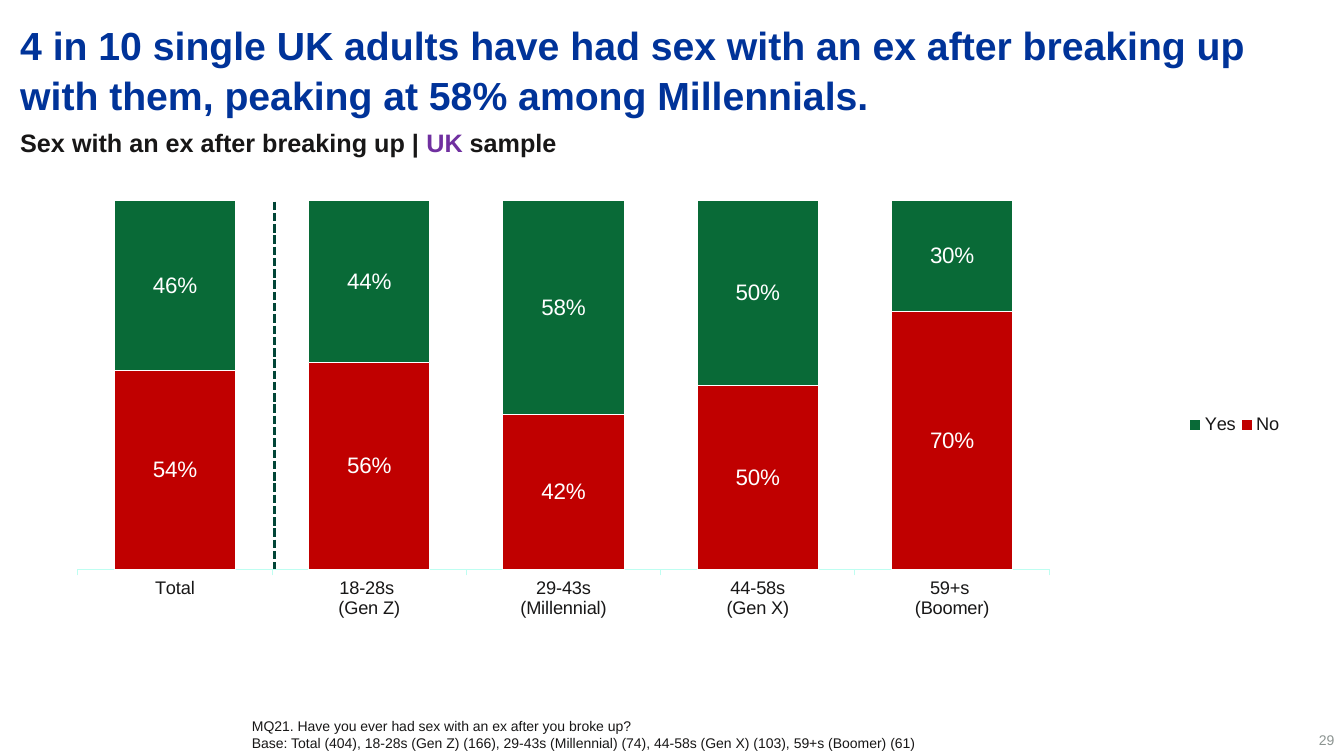
from dataclasses import dataclass

from lxml import etree
from pptx import Presentation
from pptx import util as u
from pptx.chart.data import CategoryChartData
from pptx.dml.color import RGBColor
from pptx.enum import chart as ch, dml, shapes, text
from pptx.oxml import parse_xml
from pptx.oxml.ns import nsdecls, qn

INK, GREEN, RED, WHITE = "181717", "096A37", "C00000", "FFFFFF"
NAVY, PURPLE, GREY, DARK_GREEN, MINT = "003399", "7030A0", "8C9491", "014537", "BEFEF1"


@dataclass
class Run:
    words: str
    color: str = INK


@dataclass
class TextBlock:
    box: tuple[float, float, float, float]
    paragraphs: list[list[Run]]
    size: float
    bold: bool = False
    align: text.PP_ALIGN = text.PP_ALIGN.LEFT
    anchor: text.MSO_ANCHOR = text.MSO_ANCHOR.TOP
    inset: tuple[float, float] = (0, 0)
    spacing: float = 1.0


@dataclass
class Answer:
    name: str
    shares: list[float]
    color: str


def rgb(value: str) -> RGBColor:
    return RGBColor.from_string(value)


def apply(target, values: dict) -> None:
    for name, value in values.items():
        setattr(target, name, value)


def set_font(font, size: float, color: str, bold: bool = False) -> None:
    apply(font, {"name": "Arial", "size": u.Pt(size), "bold": bold})
    font.color.rgb = rgb(color)


def set_line(line, color: str, width: float) -> None:
    line.color.rgb = rgb(color)
    line.width = u.Pt(width)


def write(shape, block: TextBlock) -> None:
    left, top, width, height = map(u.Cm, block.box)
    apply(shape, {"left": left, "top": top, "width": width, "height": height})
    side, edge = map(u.Cm, block.inset)
    frame = shape.text_frame
    apply(frame, {"word_wrap": True, "auto_size": text.MSO_AUTO_SIZE.NONE,
                  "vertical_anchor": block.anchor, "margin_left": side,
                  "margin_right": side, "margin_top": edge, "margin_bottom": edge})
    for index, runs in enumerate(block.paragraphs):
        paragraph = frame.add_paragraph() if index else frame.paragraphs[0]
        apply(paragraph, {"alignment": block.align, "line_spacing": block.spacing})
        for part in runs:
            run = paragraph.add_run()
            run.text = part.words
            set_font(run.font, block.size, part.color, block.bold)


def add_answer_chart(slide, categories: list[str], answers: list[Answer]) -> None:
    data = CategoryChartData(number_format="0%")
    data.categories = categories
    for answer in answers:
        data.add_series(answer.name, answer.shares)
    chart = slide.shapes.add_chart(
        ch.XL_CHART_TYPE.COLUMN_STACKED_100,
        u.Cm(1.14), u.Cm(4.06), u.Cm(31.55), u.Cm(13.31), data).chart
    apply(chart, {"has_title": False, "has_legend": True})
    set_font(chart.font, 10, DARK_GREEN)

    # Columns and their percentages
    plot = chart.plots[0]
    apply(plot, {"gap_width": 60, "overlap": 100, "vary_by_categories": False})
    for series, answer in zip(plot.series, answers):
        series.format.fill.solid()
        series.format.fill.fore_color.rgb = rgb(answer.color)
        set_line(series.format.line, WHITE, 0.75)
        labels = series.data_labels
        apply(labels, {"show_value": True, "number_format": "0%",
                       "number_format_is_linked": False})
        set_font(labels.font, 16, WHITE)

    # Axes
    ages, shares = chart.category_axis, chart.value_axis
    apply(ages, {"major_tick_mark": ch.XL_TICK_MARK.OUTSIDE, "has_major_gridlines": False})
    set_font(ages.tick_labels.font, 13, INK)
    set_line(ages.format.line, MINT, 0.75)
    apply(shares, {"visible": False, "has_major_gridlines": False,
                   "minimum_scale": 0, "maximum_scale": 1, "major_unit": 0.2})

    # Legend and placing inside the chart
    legend = chart.legend
    apply(legend, {"position": ch.XL_LEGEND_POSITION.RIGHT, "include_in_layout": False})
    set_font(legend.font, 13, INK)
    place(plot_area(chart), (0.026, 0.075, 0.776, 0.698), True)
    place(legend._element, (0.91, 0.465, 0.08, 0.07), False)


def plot_area(chart):
    return chart._chartSpace.find(".//" + qn("c:plotArea"))


def place(part, fractions: tuple[float, float, float, float], inner: bool) -> None:
    for old in part.findall(qn("c:layout")):
        part.remove(old)
    layout = parse_xml(f"<c:layout {nsdecls('c')}><c:manualLayout/></c:layout>")
    settings = [("layoutTarget", "inner")] if inner else []
    settings += [("xMode", "edge"), ("yMode", "edge"), *zip("xywh", fractions)]
    for tag, value in settings:
        etree.SubElement(layout[0], qn(f"c:{tag}")).set("val", str(value))
    if inner:
        part.insert(0, layout)
    else:
        part.find(qn("c:legendPos")).addnext(layout)


def add_divider(slide, x: float, top: float, bottom: float) -> None:
    divider = slide.shapes.add_connector(
        shapes.MSO_CONNECTOR.STRAIGHT, u.Cm(x), u.Cm(top), u.Cm(x), u.Cm(bottom))
    set_line(divider.line, DARK_GREEN, 2)
    divider.line.dash_style = dml.MSO_LINE.SQUARE_DOT
    etree.SubElement(divider._element.spPr, qn("a:effectLst"))


HEADLINE = TextBlock(
    (0.51, 0.48, 32.66, 2.5),
    [[Run("4 in 10 single UK adults have had sex with an ex after breaking up "
          "with them, peaking at 58% among Millennials.", NAVY)]],
    28, bold=True, spacing=1.05)
SUBTITLE = TextBlock(
    (0.51, 3.2, 31.93, 0.94),
    [[Run("Sex with an ex after breaking up | "), Run("UK", PURPLE), Run(" sample")]],
    18, bold=True)
FOOTNOTE = TextBlock(
    (6.1, 17.96, 26.59, 1.12),
    [[Run("MQ21. Have you ever had sex with an ex after you broke up?")],
     [Run("Base: Total (404), 18-28s (Gen Z) (166), 29-43s (Millennial) (74), "
          "44-58s (Gen X) (103), 59+s (Boomer) (61)")]],
    10, inset=(0.25, 0.13))
PAGE_NUMBER = TextBlock(
    (32.13, 18.26, 1.5, 0.61), [[Run("29", GREY)]], 10,
    align=text.PP_ALIGN.RIGHT, anchor=text.MSO_ANCHOR.BOTTOM)
AGE_GROUPS = ["Total", "18-28s \n(Gen Z)", "29-43s\n(Millennial)",
              "44-58s\n(Gen X)", "59+s \n(Boomer)"]
ANSWERS = [Answer("No", [0.54, 0.56, 0.42, 0.5, 0.7], RED),
           Answer("Yes", [0.46, 0.44, 0.58, 0.5, 0.3], GREEN)]


def main() -> None:
    deck = Presentation()
    apply(deck, {"slide_width": u.Cm(33.87), "slide_height": u.Cm(19.05)})
    slide = deck.slides.add_slide(deck.slide_layouts.get_by_name("Title Only"))
    write(slide.shapes.title, HEADLINE)
    add_answer_chart(slide, AGE_GROUPS, ANSWERS)
    for block in (SUBTITLE, FOOTNOTE, PAGE_NUMBER):
        write(slide.shapes.add_textbox(*map(u.Cm, block.box)), block)
    add_divider(slide, 6.91, 5.08, 14.33)
    deck.save("out.pptx")


if __name__ == "__main__":
    main()
